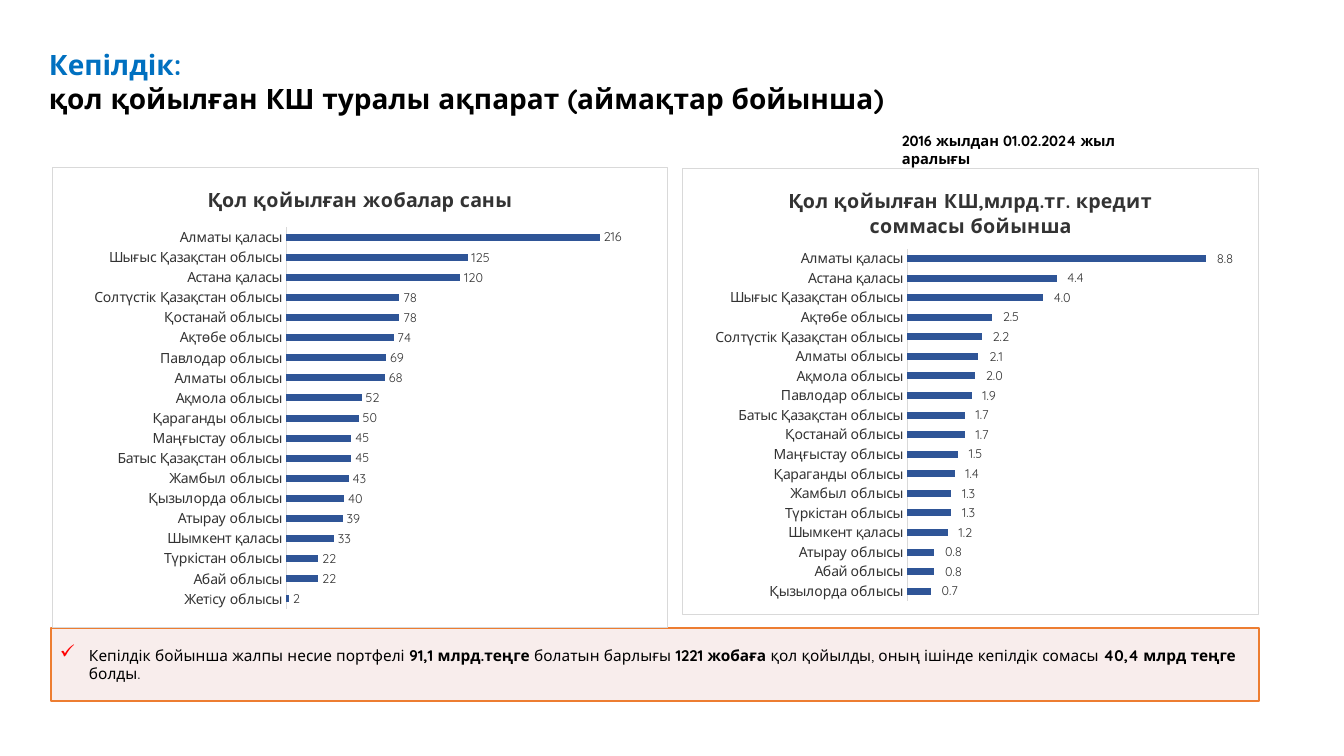
from lxml import etree
from pptx import Presentation
from pptx.chart.data import CategoryChartData
from pptx.dml.color import RGBColor
from pptx.enum.chart import XL_CHART_TYPE, XL_LABEL_POSITION, XL_TICK_MARK
from pptx.enum.shapes import MSO_SHAPE
from pptx.enum.text import MSO_ANCHOR, PP_ALIGN
from pptx.oxml import parse_xml
from pptx.oxml.ns import nsdecls, qn
from pptx.util import Pt

BAR = XL_CHART_TYPE.BAR_CLUSTERED
OUTSIDE = XL_LABEL_POSITION.OUTSIDE_END
NO_TICK = XL_TICK_MARK.NONE
RECT = MSO_SHAPE.RECTANGLE
MIDDLE, TOP = MSO_ANCHOR.MIDDLE, MSO_ANCHOR.TOP
LEFT = PP_ALIGN.LEFT
PX = 914400 / 100.8
FONT = "Quicksand"
BLACK, DARK, GRID, BLUE = "000000", "333333", "D9D9D9", "2F5597"
ACCOUNTING = r'_-* #\ ##0.0_р_._-;\-* #\ ##0.0_р_._-;_-* "-"??_р_._-;_-@_-'

HEADING = [("Кепілдік: ", "0070C0"),
           ("қол қойылған КШ туралы ақпарат (аймақтар бойынша)", BLACK)]
PERIOD = "2016 жылдан 01.02.2024 жыл аралығы"
SUMMARY = [("Кепілдік бойынша жалпы несие портфелі ", False),
           ("91,1 млрд.теңге ", True),
           ("болатын барлығы ", False),
           ("1221 жобаға ", True),
           ("қол қойылды, оның ішінде кепілдік сомасы ", False),
           ("40,4 млрд теңге ", True),
           ("болды.", False)]
PROJECTS = [
    ("Жетiсу облысы", 2), ("Абай облысы", 22), ("Түркістан облысы", 22),
    ("Шымкент қаласы", 33), ("Атырау облысы", 39), ("Қызылорда облысы", 40),
    ("Жамбыл облысы", 43), ("Батыс Қазақстан облысы", 45),
    ("Маңғыстау облысы", 45), ("Қараганды облысы", 50),
    ("Ақмола облысы", 52), ("Алматы облысы", 68), ("Павлодар облысы", 69),
    ("Ақтөбе облысы", 74), ("Қостанай облысы", 78),
    ("Солтүстік Қазақстан облысы", 78), ("Астана қаласы", 120),
    ("Шығыс Қазақстан облысы", 125), ("Алматы қаласы", 216)]
AMOUNTS = [
    ("Қызылорда облысы", 0.7), ("Абай облысы", 0.8), ("Атырау облысы", 0.8),
    ("Шымкент қаласы", 1.2), ("Түркістан облысы", 1.3),
    ("Жамбыл облысы", 1.3), ("Қараганды облысы", 1.4),
    ("Маңғыстау облысы", 1.5), ("Қостанай облысы", 1.7),
    ("Батыс Қазақстан облысы", 1.7), ("Павлодар облысы", 1.9),
    ("Ақмола облысы", 2), ("Алматы облысы", 2.1),
    ("Солтүстік Қазақстан облысы", 2.2), ("Ақтөбе облысы", 2.5),
    ("Шығыс Қазақстан облысы", 4), ("Астана қаласы", 4.4),
    ("Алматы қаласы", 8.8)]
CHARTS = [
    dict(title="Қол қойылған жобалар саны", rows=PROJECTS, top=250,
         box=(52, 167, 616, 461), plot=(0.38, 0.13, 0.59, 0.83), fmt="General"),
    dict(title="Қол қойылған КШ,млрд.тг. кредит соммасы бойынша",
         rows=AMOUNTS, top=10, box=(682, 168, 577, 447),
         plot=(0.39, 0.18, 0.59, 0.79), fmt=ACCOUNTING)]


def px(n):
    return round(n * PX)


def color(value):
    return RGBColor.from_string(value)


def style(font, size, value, bold=False, name=FONT):
    for key, val in dict(name=name, size=Pt(size), bold=bold).items():
        setattr(font, key, val)
    font.color.rgb = color(value)


def add_run(p, text, size, value, bold):
    r = p.add_run()
    r.text = text
    style(r.font, size, value, bold)


def add_text(s, box):
    tf = s.shapes.add_textbox(*map(px, box)).text_frame
    tf.word_wrap = True
    tf.vertical_anchor = TOP
    return tf.paragraphs[0]


def add_bar_chart(s, title, rows, top, box, plot, fmt):
    data = CategoryChartData(number_format=fmt)
    data.categories = [name for name, _ in rows]
    data.add_series("Series 1", [value for _, value in rows])
    chart = s.shapes.add_chart(BAR, *map(px, box), data).chart
    style(chart.font, 10, BLACK, name="Calibri")
    chart.has_legend = False
    chart.has_title = True
    add_run(chart.chart_title.text_frame.paragraphs[0], title, 14, DARK, True)

    axis = chart.category_axis
    axis.major_tick_mark = axis.minor_tick_mark = NO_TICK
    style(axis.tick_labels.font, 10, DARK)
    axis.format.line.color.rgb = color(GRID)
    axis.format.line.width = Pt(0.75)
    values = chart.value_axis
    for key, val in dict(visible=False, has_major_gridlines=False,
                         minimum_scale=0, maximum_scale=top).items():
        setattr(values, key, val)

    bars = chart.plots[0]
    bars.gap_width = 182
    bars.vary_by_categories = False
    bars.series[0].format.fill.solid()
    bars.series[0].format.fill.fore_color.rgb = color(BLUE)
    labels = bars.series[0].data_labels
    for key, val in dict(show_value=True, position=OUTSIDE, number_format=fmt,
                         number_format_is_linked=False).items():
        setattr(labels, key, val)
    style(labels.font, 9, DARK)

    root = chart.element.find(qn("c:chart"))
    area = root.find(qn("c:plotArea"))
    for old in area.findall(qn("c:layout")):
        area.remove(old)
    places = "".join(f'<c:{tag} val="{val}"/>' for tag, val in zip("xywh", plot))
    area.insert(0, parse_xml(
        f'<c:layout {nsdecls("c")}><c:manualLayout><c:layoutTarget val="inner"/>'
        f'<c:xMode val="edge"/><c:yMode val="edge"/>{places}'
        '</c:manualLayout></c:layout>'))
    root.addnext(parse_xml(
        f'<c:spPr {nsdecls("c", "a")}><a:solidFill><a:srgbClr val="FFFFFF"/>'
        f'</a:solidFill><a:ln w="9525"><a:solidFill><a:srgbClr val="{GRID}"/>'
        '</a:solidFill></a:ln></c:spPr>'))


def add_summary(s):
    sp = s.shapes.add_shape(RECT, *map(px, (51, 628, 1208, 73)))
    sp.shadow.inherit = False
    sp.fill.solid()
    sp.fill.fore_color.rgb = color("F2DCDB")
    fill = sp.fill._xPr.find(qn("a:solidFill"))
    etree.SubElement(fill[0], qn("a:alpha"), val="50000")
    sp.line.color.rgb = color("ED7D31")
    sp.line.width = Pt(1)
    tf = sp.text_frame
    for key, val in dict(word_wrap=True, vertical_anchor=MIDDLE,
                         margin_left=px(8), margin_right=px(8),
                         margin_top=px(4), margin_bottom=px(4)).items():
        setattr(tf, key, val)
    p = tf.paragraphs[0]
    p.alignment = LEFT
    p.space_after = Pt(6)
    pPr = p._p.get_or_add_pPr()
    pPr.set("marL", str(px(30)))
    pPr.set("indent", str(px(-29)))
    bullet = etree.SubElement(pPr, qn("a:buClr"))
    etree.SubElement(bullet, qn("a:srgbClr"), val="FF0000")
    etree.SubElement(pPr, qn("a:buSzPct"), val="125000")
    etree.SubElement(pPr, qn("a:buChar"), char="✓")
    for text, bold in SUMMARY:
        add_run(p, text, 11, BLACK, bold)


def main():
    """Build the slide on guarantees signed by region."""
    prs = Presentation()
    prs.slide_width, prs.slide_height = px(1344), px(756)
    s = prs.slides.add_slide(prs.slide_layouts[6])
    p = add_text(s, (39, 43, 865, 78))
    for i, (text, value) in enumerate(HEADING):
        if i:
            p.add_line_break()
        add_run(p, text, 20, value, True)
    add_run(add_text(s, (892, 127, 303, 28)), PERIOD, 10.5, BLACK, True)
    add_summary(s)
    for chart in CHARTS:
        add_bar_chart(s, **chart)
    prs.save("out.pptx")


if __name__ == "__main__":
    main()
